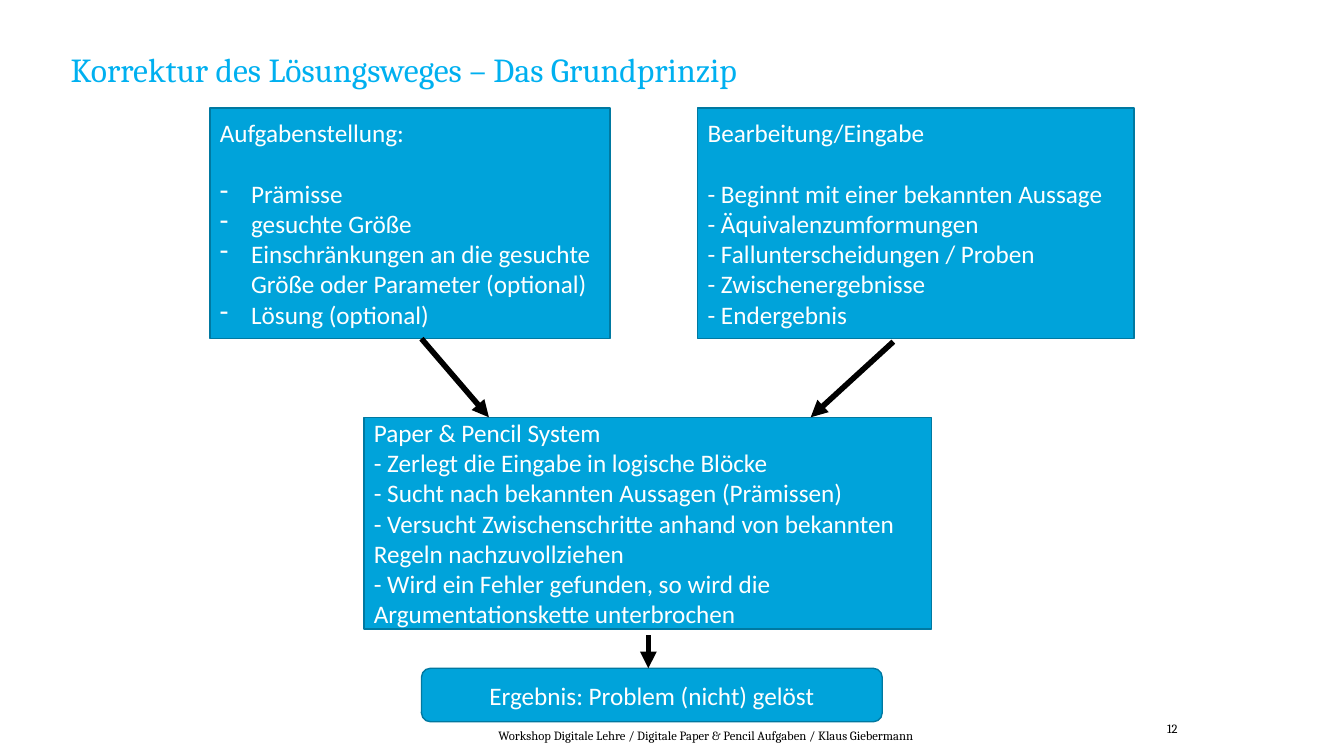
from lxml.etree import SubElement
from pptx import Presentation
from pptx.dml.color import RGBColor
from pptx.enum.shapes import MSO_CONNECTOR, MSO_SHAPE
from pptx.enum.text import MSO_ANCHOR, PP_ALIGN
from pptx.oxml.ns import qn
from pptx.util import Inches, Pt

WIDTH, HEIGHT = Inches(13.33), Inches(7.5)
BLACK = RGBColor(0x00, 0x00, 0x00)
WHITE = RGBColor(0xFF, 0xFF, 0xFF)
TITLE_BLUE = RGBColor(0x00, 0xB0, 0xF0)
BOX_BLUE = RGBColor(0x00, 0xA3, 0xDA)
BORDER_BLUE = RGBColor(0x00, 0x79, 0xA1)
BULLET_INDENT = Inches(0.31)
HEADING_GAP = 22

# The grid has 100 columns and 100 rows.
TOP_ROW = 14.27
SYSTEM_ROW = 55.2
RESULT_ROW = 88.4
FOOTER_ROW = 94.67
CENTER_COLUMN = 48.24


def column(number):
    return round(WIDTH * number / 100)


def row(number):
    return round(HEIGHT * number / 100)


def grid_area(left, top, width, height):
    return column(left), row(top), column(width), row(height)


def add_bullet(paragraph):
    properties = paragraph._p.get_or_add_pPr()
    properties.set("marL", str(BULLET_INDENT))
    properties.set("indent", str(-BULLET_INDENT))
    SubElement(properties, qn("a:buChar")).set("char", "-")


def write(frame, lines, font="Calibri", size=18, color=WHITE,
          align=PP_ALIGN.LEFT, anchor=MSO_ANCHOR.MIDDLE, margin=None,
          line_spacing=None, heading_gap=0, bullets=False):
    """Fill a text frame; the first line counts as the heading."""
    frame.word_wrap = True
    frame.vertical_anchor = anchor
    if margin is not None:
        frame.margin_left = frame.margin_right = margin
        frame.margin_top = frame.margin_bottom = margin
    for index, line in enumerate(lines):
        paragraph = frame.add_paragraph() if index else frame.paragraphs[0]
        paragraph.text = line
        paragraph.alignment = align
        if line_spacing:
            paragraph.line_spacing = line_spacing
        if heading_gap and index == 0:
            paragraph.space_after = Pt(heading_gap)
        if bullets and index:
            add_bullet(paragraph)
        paragraph.font.name = font
        paragraph.font.size = Pt(size)
        paragraph.font.color.rgb = color


def add_text(slide, area, text, **text_format):
    text_box = slide.shapes.add_textbox(*grid_area(*area))
    write(text_box.text_frame, [text], font="Cambria", **text_format)


def add_box(slide, area, lines, kind=MSO_SHAPE.RECTANGLE, **text_format):
    shape = slide.shapes.add_shape(kind, *grid_area(*area))
    shape.shadow.inherit = False
    shape.fill.solid()
    shape.fill.fore_color.rgb = BOX_BLUE
    shape.line.color.rgb = BORDER_BLUE
    shape.line.width = Pt(1)
    write(shape.text_frame, lines, **text_format)


def add_arrow(slide, start, end):
    arrow = slide.shapes.add_connector(
        MSO_CONNECTOR.STRAIGHT, column(start[0]), row(start[1]),
        column(end[0]), row(end[1]))
    arrow.line.color.rgb = BLACK
    arrow.line.width = Pt(4)
    SubElement(arrow.line._get_or_add_ln(), qn("a:tailEnd")).set("type", "triangle")
    SubElement(arrow._element.spPr, qn("a:effectLst"))


def main():
    presentation = Presentation()
    presentation.slide_width, presentation.slide_height = WIDTH, HEIGHT
    slide = presentation.slides.add_slide(presentation.slide_layouts[6])

    add_text(slide, (18.9, FOOTER_ROW, 67.2, 5.33),
             "Workshop Digitale Lehre / Digitale Paper & Pencil Aufgaben / Klaus Giebermann",
             size=9, color=BLACK, align=PP_ALIGN.CENTER)
    add_text(slide, (86.1, FOOTER_ROW, 8.63, 5.33), "12",
             size=9, color=BLACK, anchor=MSO_ANCHOR.TOP)
    add_text(slide, (5.25, 7.07, 89.63, 6.27),
             "Korrektur des Lösungsweges – Das Grundprinzip",
             size=24, color=TITLE_BLUE, anchor=MSO_ANCHOR.TOP, margin=0,
             line_spacing=0.9)

    add_box(slide, (15.62, TOP_ROW, 29.78, 30.5), [
        "Aufgabenstellung:",
        "Prämisse",
        "gesuchte Größe",
        "Einschränkungen an die gesuchte Größe oder Parameter (optional)",
        "Lösung (optional)",
    ], heading_gap=HEADING_GAP, bullets=True)
    add_box(slide, (27.08, SYSTEM_ROW, 42.23, 28), [
        "Paper & Pencil System",
        "- Zerlegt die Eingabe in logische Blöcke",
        "- Sucht nach bekannten Aussagen (Prämissen)",
        "- Versucht Zwischenschritte anhand von bekannten Regeln nachzuvollziehen",
        "- Wird ein Fehler gefunden, so wird die Argumentationskette unterbrochen",
    ])
    add_box(slide, (51.91, TOP_ROW, 32.48, 30.5), [
        "Bearbeitung/Eingabe",
        "- Beginnt mit einer bekannten Aussage",
        "- Äquivalenzumformungen",
        "- Fallunterscheidungen / Proben",
        "- Zwischenergebnisse",
        "- Endergebnis",
    ], heading_gap=HEADING_GAP)
    add_box(slide, (31.36, RESULT_ROW, 34.28, 7.07),
            ["Ergebnis: Problem (nicht) gelöst"],
            kind=MSO_SHAPE.ROUNDED_RECTANGLE, align=PP_ALIGN.CENTER)

    add_arrow(slide, (31.36, 44.8), (36.38, SYSTEM_ROW))
    add_arrow(slide, (66.47, 45.2), (60.32, SYSTEM_ROW))
    add_arrow(slide, (CENTER_COLUMN, 84), (CENTER_COLUMN, RESULT_ROW))

    presentation.save("out.pptx")


if __name__ == "__main__":
    main()
